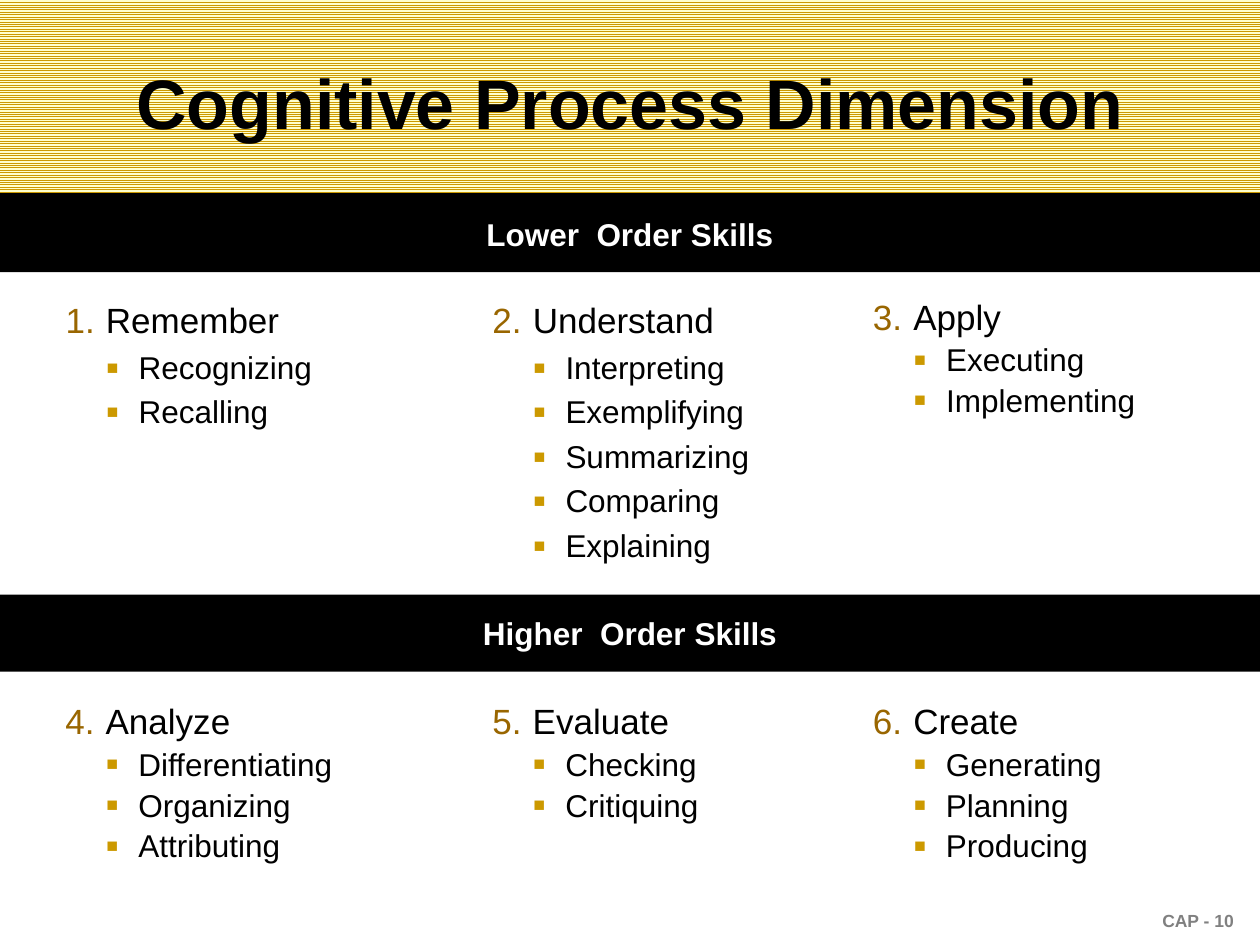
from lxml import etree
from pptx import Presentation
from pptx.dml.color import RGBColor
from pptx.enum.dml import MSO_PATTERN
from pptx.enum.shapes import MSO_CONNECTOR, MSO_SHAPE
from pptx.enum.text import MSO_ANCHOR, MSO_AUTO_SIZE, PP_ALIGN
from pptx.oxml.ns import qn
from pptx.util import Inches, Pt

RECT = MSO_SHAPE.RECTANGLE
STRAIGHT = MSO_CONNECTOR.STRAIGHT
STRIPES = MSO_PATTERN.NARROW_HORIZONTAL
MIDDLE, TOP = MSO_ANCHOR.MIDDLE, MSO_ANCHOR.TOP
CENTER, RIGHT = PP_ALIGN.CENTER, PP_ALIGN.RIGHT
NO_FIT = MSO_AUTO_SIZE.NONE

FONT = "Arial"
COLORS = {
    "black": "000000", "white": "FFFFFF", "gold": "CC9900",
    "cream": "FFFFCC", "number": "996600", "footer": "808080",
}
COLUMNS = [0.24, 3.63, 6.65]
BANDS = [("Lower  Order Skills", 1.55), ("Higher  Order Skills", 4.72)]
ROWS = [2.36, 5.57]
# Heading, skills, box width, box height, line spacing; numbered in this order
PROCESSES = [
    ("Remember", ["Recognizing", "Recalling"], 2.94, 1.36, 0.9),
    ("Understand", ["Interpreting", "Exemplifying", "Summarizing",
                    "Comparing", "Explaining"], 2.68, 2.34, 0.9),
    ("Apply", ["Executing", "Implementing"], 2.61, 1.4, 0.8),
    ("Analyze", ["Differentiating", "Organizing", "Attributing"], 2.96, 1.66, 0.8),
    ("Evaluate", ["Checking", "Critiquing"], 2.43, 1.3, 0.8),
    ("Create", ["Generating", "Planning", "Producing"], 3.14, 1.29, 0.8),
]


def rgb(name):
    return RGBColor.from_string(COLORS[name])


def place(sp, x, y, w, h):
    sp.left, sp.top, sp.width, sp.height = map(Inches, (x, y, w, h))


def add_run(p, text, size, color="black", bold=False):
    r = p.add_run()
    r.text = text
    r.font.name = FONT
    r.font.size = Pt(size)
    r.font.bold = bold
    r.font.color.rgb = rgb(color)


def add_rect(s, x, y, w, h):
    sp = s.shapes.add_shape(RECT, *map(Inches, (x, y, w, h)))
    sp.shadow.inherit = False
    sp.line.fill.background()
    return sp


def add_header(s):
    """Striped panel and rule, kept behind the title."""
    panel = add_rect(s, 0, 0, 10, 1.58)
    panel.fill.patterned()
    panel.fill.pattern = STRIPES
    panel.fill.fore_color.rgb = rgb("gold")
    panel.fill.back_color.rgb = rgb("cream")
    rule = s.shapes.add_connector(STRAIGHT, 0, Inches(1.58), Inches(10), Inches(1.58))
    rule.line.color.rgb = rgb("black")
    rule.line.width = Pt(6.5)
    etree.SubElement(rule._element.spPr, qn("a:effectLst"))

    title = s.shapes.title
    for sp in (panel, rule):
        title._element.addprevious(sp._element)
    place(title, 0, 0.18, 10, 1.25)
    tf = title.text_frame
    tf.auto_size = NO_FIT
    tf.vertical_anchor = MIDDLE
    p = tf.paragraphs[0]
    p.alignment = CENTER
    add_run(p, "Cognitive Process Dimension", 40, bold=True)


def add_band(s, text, y):
    band = add_rect(s, 0, y, 10, 0.61)
    band.fill.solid()
    band.fill.fore_color.rgb = rgb("black")
    band.text_frame.vertical_anchor = MIDDLE
    p = band.text_frame.paragraphs[0]
    p.alignment = CENTER
    add_run(p, text, 18, "white", bold=True)


def set_marker(p, margin, indent, color, number=None):
    """Number the paragraph, or give it a square bullet."""
    pPr = p._p.get_or_add_pPr()
    pPr.set("marL", str(Inches(margin)))
    pPr.set("indent", str(Inches(indent)))
    clr = etree.SubElement(pPr, qn("a:buClr"))
    etree.SubElement(clr, qn("a:srgbClr"), val=COLORS[color])
    if number is None:
        etree.SubElement(pPr, qn("a:buSzPct"), val="120000")
    etree.SubElement(pPr, qn("a:buFont"), typeface=FONT)
    if number is None:
        etree.SubElement(pPr, qn("a:buChar"), char="▪")
    else:
        etree.SubElement(pPr, qn("a:buAutoNum"), type="arabicPeriod", startAt=str(number))


def fill_process(sp, number, heading, skills, spacing):
    tf = sp.text_frame
    tf.word_wrap = True
    tf.auto_size = NO_FIT
    tf.vertical_anchor = TOP
    for i, text in enumerate([heading] + skills):
        p = tf.add_paragraph() if i else tf.paragraphs[0]
        p.line_spacing = spacing
        p.space_before = Pt(6)
        if i:
            p.level = 1
            set_marker(p, 0.76, -0.26, "gold")
        else:
            set_marker(p, 0.5, -0.32, "number", number)
        add_run(p, text, 18 if i else 20)


def add_footer(s):
    sp = s.shapes.add_textbox(*map(Inches, (7.56, 7.17, 2.33, 0.18)))
    sp.text_frame.word_wrap = True
    p = sp.text_frame.paragraphs[0]
    p.alignment = RIGHT
    add_run(p, "CAP - 10", 10, "footer", bold=True)


def main():
    prs = Presentation()
    prs.slide_width, prs.slide_height = Inches(10), Inches(7.5)
    s = prs.slides.add_slide(prs.slide_layouts[1])
    add_header(s)
    for text, y in BANDS:
        add_band(s, text, y)
    for i, (heading, skills, w, h, spacing) in enumerate(PROCESSES):
        row, col = divmod(i, len(COLUMNS))
        sp = s.shapes.add_textbox(0, 0, 0, 0) if i else s.placeholders[1]
        place(sp, COLUMNS[col], ROWS[row], w, h)
        fill_process(sp, i + 1, heading, skills, spacing)
    add_footer(s)
    prs.save("out.pptx")


if __name__ == "__main__":
    main()
